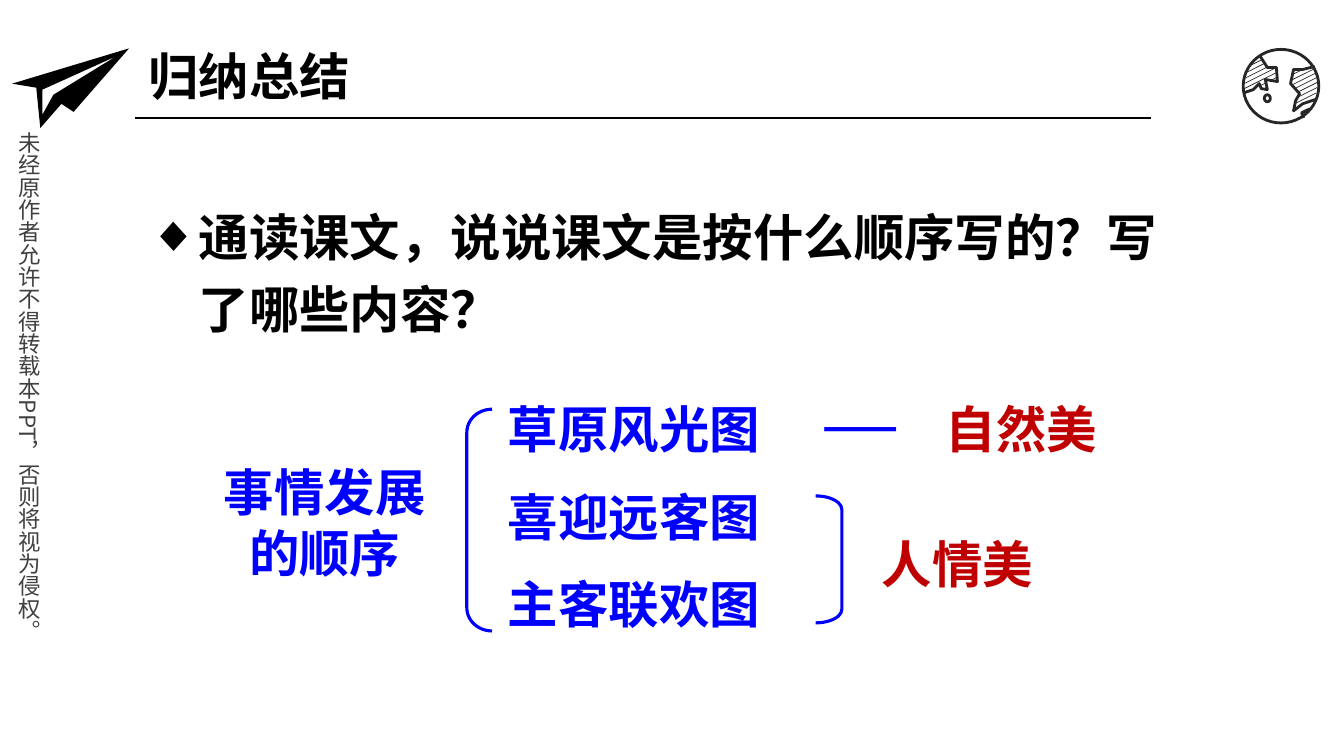
import math

import pptx
import pptx.dml.color
import pptx.enum.shapes
import pptx.enum.text
import pptx.oxml.ns
import pptx.util
from lxml import etree

Inches = pptx.util.Inches
Pt = pptx.util.Pt
qn = pptx.oxml.ns.qn
Shape = pptx.enum.shapes.MSO_SHAPE
Align = pptx.enum.text.PP_ALIGN

FONT = "Noto Sans CJK SC"
COLORS = {
    "ink": "000000", "blue": "0000FF", "red": "C00000",
    "globe": "262626", "notice": "404040",
}

PLANE_FOLD = [(1.15, 0.56), (0.42, 0.89), (0.42, 1.14), (0.53, 0.94)]
PLANE_WINGS = [(1.28, 0.48), (0.73, 1.11), (0.61, 1.03), (0.4, 1.27), (0.36, 0.87), (0.12, 0.83)]

WEST_COAST = [
    (12.5, 0.56), (12.57, 0.67), (12.66, 0.67), (12.67, 0.81), (12.55, 0.79),
    (12.57, 0.89), (12.51, 0.88), (12.49, 0.83), (12.43, 0.89), (12.34, 0.92),
]
WEST_RIM = [(12.35, 0.71), (12.41, 0.61)]
EAST_COAST = [
    (13.04, 0.66), (12.92, 0.69), (12.83, 0.69), (12.8, 0.83), (12.89, 0.93),
    (12.85, 1), (12.83, 1.1), (12.92, 1.03), (13.04, 0.99),
]
EAST_RIM = [(13.07, 0.85)]
SOUTH_COAST = [(12.99, 1.08), (12.91, 1.12), (12.93, 1.17)]
HATCH_SLOPE = -0.5
HATCH_GAP = 0.05

ROW_TOP = 3.9
ROW_STEP = 0.87
SCENES = ("草原风光图", "喜迎远客图", "主客联欢图")


def rgb(name):
    """Return the named colour."""
    return pptx.dml.color.RGBColor.from_string(COLORS[name])


def style_outline(shape, color, width):
    """Leave only a coloured line on a shape."""
    shape.shadow.inherit = False
    shape.fill.background()
    shape.line.color.rgb = rgb(color)
    shape.line.width = Pt(width)


def add_preset(page, kind, bounds, color, width):
    """Add an unfilled preset shape."""
    shape = page.shapes.add_shape(kind, *map(Inches, bounds))
    style_outline(shape, color, width)
    return shape


def add_freeform(page, contours, closed, color, width):
    """Draw contours as one unfilled freeform."""
    scaled = [[(Inches(x), Inches(y)) for x, y in contour] for contour in contours]
    builder = page.shapes.build_freeform(*scaled[0][0], scale=1.0)
    for contour in scaled:
        builder.move_to(*contour[0])
        builder.add_line_segments(contour[1:], close=closed)
    shape = builder.convert_to_shape()
    style_outline(shape, color, width)
    return shape


def add_line(page, start, end, color, width):
    """Draw a straight line without shadow."""
    line = page.shapes.add_connector(
        pptx.enum.shapes.MSO_CONNECTOR.STRAIGHT, *map(Inches, (*start, *end)))
    line.line.color.rgb = rgb(color)
    line.line.width = Pt(width)
    etree.SubElement(line._element.spPr, qn("a:effectLst"))


def hatch_lines(land):
    """Yield the parts of evenly spaced slanted lines that lie inside a land."""
    heights = [y - HATCH_SLOPE * x for x, y in land]
    first = math.ceil(min(heights) / HATCH_GAP)
    last = math.floor(max(heights) / HATCH_GAP)
    for number in range(first, last + 1):
        level = number * HATCH_GAP
        crossings = []
        for index, (x, y) in enumerate(land):
            before_x, before_y = land[index - 1]
            before, after = heights[index - 1], heights[index]
            if (before < level) != (after < level):
                share = (level - before) / (after - before)
                crossings.append(
                    (before_x + share * (x - before_x), before_y + share * (y - before_y)))
        crossings.sort()
        yield from zip(crossings[::2], crossings[1::2])


def add_globe(page):
    """Draw the globe with coasts, an island and hatched lands."""
    add_preset(page, Shape.OVAL, (12.33, 0.49, 0.75, 0.73), "globe", 2)
    add_preset(page, Shape.OVAL, (12.54, 0.94, 0.06, 0.07), "globe", 2)
    for coast in (WEST_COAST, EAST_COAST, SOUTH_COAST):
        add_freeform(page, [coast], False, "globe", 2)
    for land in (WEST_COAST + WEST_RIM, EAST_COAST + EAST_RIM):
        for start, end in hatch_lines(land):
            add_line(page, start, end, "globe", 0.5)


def add_plane(page):
    """Draw the paper plane."""
    plane = add_freeform(page, [PLANE_FOLD, PLANE_WINGS], True, "ink", 0.5)
    plane.fill.solid()
    plane.fill.fore_color.rgb = rgb("ink")
    plane.line.fill.background()


def write(box, text, color, align=Align.LEFT, size=36, bold=True, spacing=1.0):
    """Put one formatted paragraph into a box."""
    frame = box.text_frame
    frame.word_wrap = True
    frame.auto_size = pptx.enum.text.MSO_AUTO_SIZE.NONE
    para = frame.paragraphs[0]
    para.text = text
    para.alignment = align
    para.line_spacing = spacing
    para.space_before = Pt(0)
    para.font.size = Pt(size)
    para.font.bold = bold
    para.font.color.rgb = rgb(color)
    para.font.name = FONT
    defaults = para._p.pPr.find(qn("a:defRPr"))
    etree.SubElement(defaults, qn("a:ea"), typeface=FONT)
    return para


def add_label(page, bounds, text, color, **style):
    """Add a text box with one paragraph."""
    box = page.shapes.add_textbox(*map(Inches, bounds))
    write(box, text, color, **style)
    return box


def place(box, bounds):
    """Move and size a placeholder."""
    box.left, box.top, box.width, box.height = map(Inches, bounds)


def add_bullet(para, symbol, indent):
    """Give a paragraph a bullet with a hanging indent."""
    properties = para._p.pPr
    properties.set("marL", str(Inches(indent)))
    properties.set("indent", str(-Inches(indent)))
    bullet = etree.Element(qn("a:buChar"), char=symbol)
    properties.find(qn("a:defRPr")).addprevious(bullet)


def add_bracket(page, kind, bounds, curve):
    """Add a blue bracket."""
    bracket = add_preset(page, kind, bounds, "blue", 2.25)
    bracket.adjustments[0] = curve


def add_frame(page):
    """Draw the decoration and the notice around the content."""
    notice = add_label(
        page, (0, 1.21, 0.6, 6.2), "未经原作者允许不得转载本PPT，否则将视为侵权。",
        "notice", size=16, bold=False, spacing=1.5)
    notice.text_frame._txBody.bodyPr.set("vert", "eaVert")
    add_globe(page)
    add_plane(page)
    add_line(page, (1.34, 1.17), (11.42, 1.17), "ink", 1.5)


def add_heading(page):
    """Fill the title and the question."""
    title, question = page.shapes.title, page.placeholders[1]
    place(title, (1.37, 0.49, 8.94, 0.59))
    title.text_frame.vertical_anchor = pptx.enum.text.MSO_ANCHOR.MIDDLE
    write(title, "归纳总结", "ink", spacing=0.9)
    place(question, (1.37, 1.87, 10.23, 1.46))
    para = write(
        question, "通读课文，说说课文是按什么顺序写的？写了哪些内容？", "ink", spacing=1.2)
    add_bullet(para, "◆", 0.5)


def add_outline_chart(page):
    """Lay out the order, its scenes and their two kinds of beauty."""
    center = Align.CENTER
    add_label(page, (2.11, 4.53, 2.22, 1.31), "事情发展的顺序", "blue", align=center)
    add_bracket(page, Shape.LEFT_BRACKET, (4.63, 4.06, 0.25, 2.2), 0.92)
    for row, scene in enumerate(SCENES):
        add_label(page, (4.94, ROW_TOP + ROW_STEP * row, 2.9, 0.7), scene, "blue")
    add_label(page, (7.85, ROW_TOP, 1.37, 0.64), "——", "blue", align=center, size=32)
    add_label(page, (9.03, ROW_TOP, 2.2, 0.7), "自然美", "red", align=center)
    add_bracket(page, Shape.RIGHT_BRACKET, (8.09, 4.92, 0.26, 1.26), 0.52)
    add_label(page, (8.64, 5.24, 1.71, 0.7), "人情美", "red", align=center)


def main():
    """Build the summary slide."""
    deck = pptx.Presentation()
    deck.slide_width, deck.slide_height = Inches(13.33), Inches(7.5)
    page = deck.slides.add_slide(deck.slide_layouts[1])
    add_frame(page)
    add_heading(page)
    add_outline_chart(page)
    deck.save("out.pptx")


if __name__ == "__main__":
    main()
